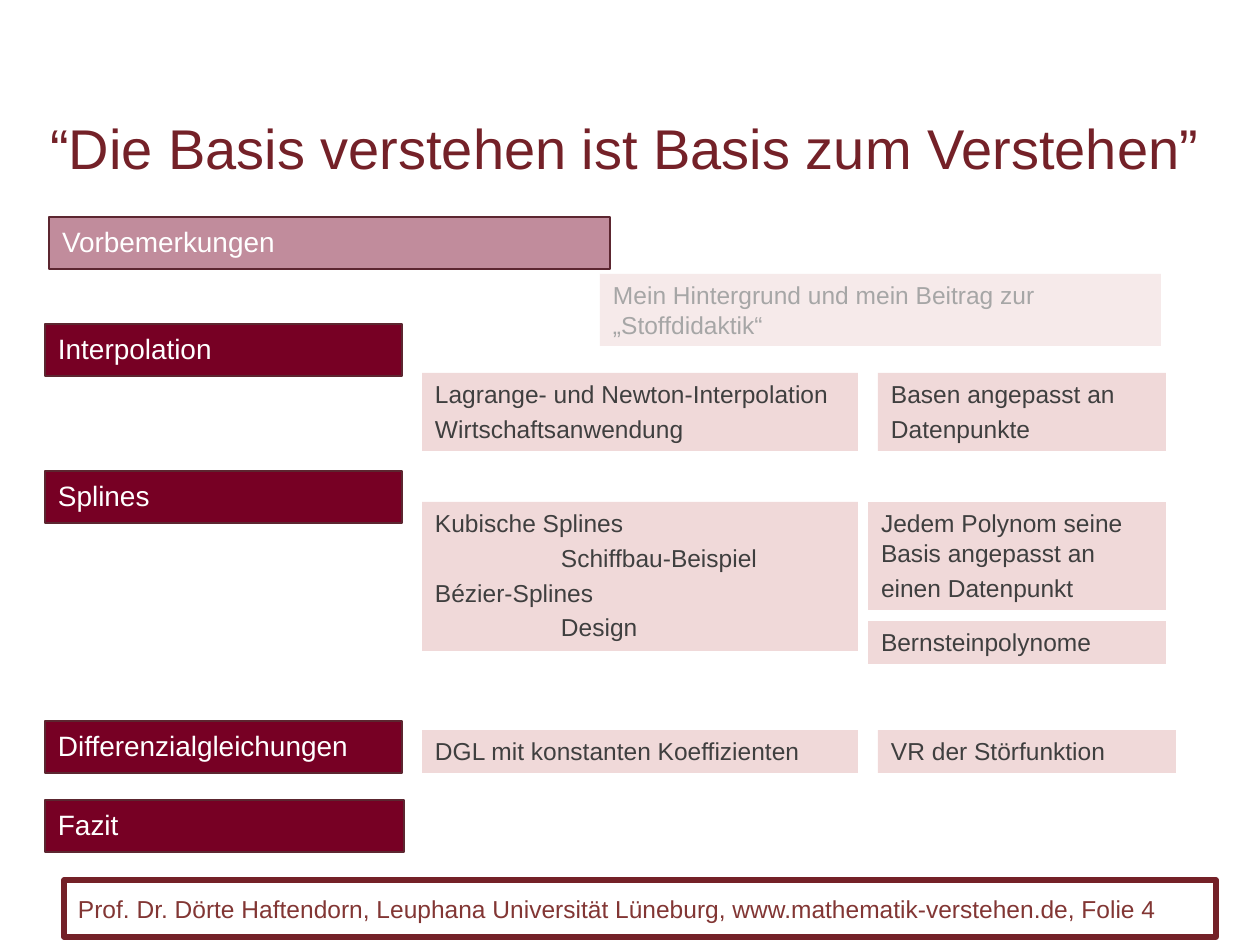
"""Build the agenda slide of a talk on bases in mathematics."""
from lxml.etree import SubElement
from pptx import Presentation
from pptx.dml.color import RGBColor
from pptx.enum.shapes import MSO_SHAPE
from pptx.enum.text import MSO_ANCHOR, MSO_AUTO_SIZE, PP_ALIGN
from pptx.oxml.ns import qn
from pptx.util import Pt

COLORS = {
    "wine": "770024", "edge": "5C2630", "title": "742128", "rose": "F0D9D9",
    "text": "3F3F3F", "faded": "A6A6A6", "footer": "823634", "white": "FFFFFF",
}
EMU_PER_PX = 914400 / 126
INSET_X, INSET_Y, TAB = 13, 6, 126


def px(value):
    return round(value * EMU_PER_PX)


def rgb(name):
    return RGBColor.from_string(COLORS[name])


class SlideBuilder:
    font = "Arial"
    line_factor = 1.22
    gap_factor = 0.2

    def __init__(self, prs):
        self.slide = prs.slides.add_slide(prs.slide_layouts[5])

    def add_text(self, sp, lines, size, color, align=PP_ALIGN.LEFT,
                 anchor=MSO_ANCHOR.TOP, inset=(INSET_X, INSET_Y)):
        tf = sp.text_frame
        tf.word_wrap = True
        tf.auto_size = MSO_AUTO_SIZE.NONE
        tf.vertical_anchor = anchor
        tf.margin_left = tf.margin_right = px(inset[0])
        tf.margin_top = tf.margin_bottom = px(inset[1])
        for i, (text, indent) in enumerate(lines):
            p = tf.add_paragraph() if i else tf.paragraphs[0]
            if indent:
                p._p.get_or_add_pPr().set("marL", str(px(indent)))
            p.alignment = align
            p.line_spacing = Pt(round(size * self.line_factor))
            p.space_before = Pt(size * self.gap_factor if i else 0)
            r = p.add_run()
            r.text = text
            r.font.name = self.font
            r.font.size = Pt(size)
            r.font.color.rgb = rgb(color)

    def box(self, x, y, w, h, fill=None, line=None, weight=1, alpha=None):
        sp = self.slide.shapes.add_shape(MSO_SHAPE.RECTANGLE, px(x), px(y), px(w), px(h))
        sp.shadow.inherit = False
        if fill:
            sp.fill.solid()
            sp.fill.fore_color.rgb = rgb(fill)
        else:
            sp.fill.background()
        if alpha:
            clr = sp._element.spPr.find(qn("a:solidFill"))[0]
            SubElement(clr, qn("a:alpha")).set("val", str(alpha * 1000))
        if line:
            sp.line.color.rgb = rgb(line)
            sp.line.width = Pt(weight)
        else:
            sp.line.fill.background()
        return sp

    def title(self, text, x, y, w, h):
        sp = self.slide.shapes.title
        sp.left, sp.top, sp.width, sp.height = px(x), px(y), px(w), px(h)
        self.add_text(sp, [(text, 0)], 32, "title", PP_ALIGN.CENTER)

    def section(self, text, x, y, w, alpha=None):
        sp = self.box(x, y, w, 52, "wine", "edge", alpha=alpha)
        self.add_text(sp, [(text, 0)], 16, "white")

    def topic(self, lines, x, y, w, h, color="text", alpha=None):
        sp = self.box(x, y, w, h, "rose", alpha=alpha)
        self.add_text(sp, lines, 14, color)

    def footer(self, text, x, y, w, h):
        sp = self.box(x, y, w, h, line="title", weight=3)
        self.add_text(sp, [(text, 0)], 14, "footer", anchor=MSO_ANCHOR.MIDDLE, inset=(14, 0))


def main():
    prs = Presentation()
    prs.slide_width, prs.slide_height = px(1260), px(945)
    s = SlideBuilder(prs)

    s.title("“Die Basis verstehen ist Basis zum Verstehen”", 25, 106, 1200, 81)

    s.section("Vorbemerkungen", 49, 217, 561, alpha=45)
    for text, y, w in [
        ("Interpolation", 324, 357),
        ("Splines", 471, 357),
        ("Differenzialgleichungen", 721, 357),
        ("Fazit", 800, 359),
    ]:
        s.section(text, 45, y, w)

    s.topic([("Mein Hintergrund und mein Beitrag zur „Stoffdidaktik“", 0)],
            600, 274, 561, 72, "faded", alpha=55)
    for x, y, w, h, lines in [
        (422, 373, 436, 78, [("Lagrange- und Newton-Interpolation", 0),
                             ("Wirtschaftsanwendung", 0)]),
        (878, 373, 288, 78, [("Basen angepasst an", 0), ("Datenpunkte", 0)]),
        (422, 502, 436, 149, [("Kubische Splines", 0), ("Schiffbau-Beispiel", TAB),
                              ("Bézier-Splines", 0), ("Design", TAB)]),
        (868, 502, 298, 108, [("Jedem Polynom seine Basis angepasst an", 0),
                              ("einen Datenpunkt", 0)]),
        (868, 621, 298, 43, [("Bernsteinpolynome", 0)]),
        (422, 730, 436, 43, [("DGL mit konstanten Koeffizienten", 0)]),
        (878, 730, 298, 43, [("VR der Störfunktion", 0)]),
    ]:
        s.topic(lines, x, y, w, h)

    s.footer("Prof. Dr. Dörte Haftendorn, Leuphana Universität Lüneburg, "
             "www.mathematik-verstehen.de, Folie 4", 64, 880, 1152, 57)
    prs.save("out.pptx")


if __name__ == "__main__":
    main()
